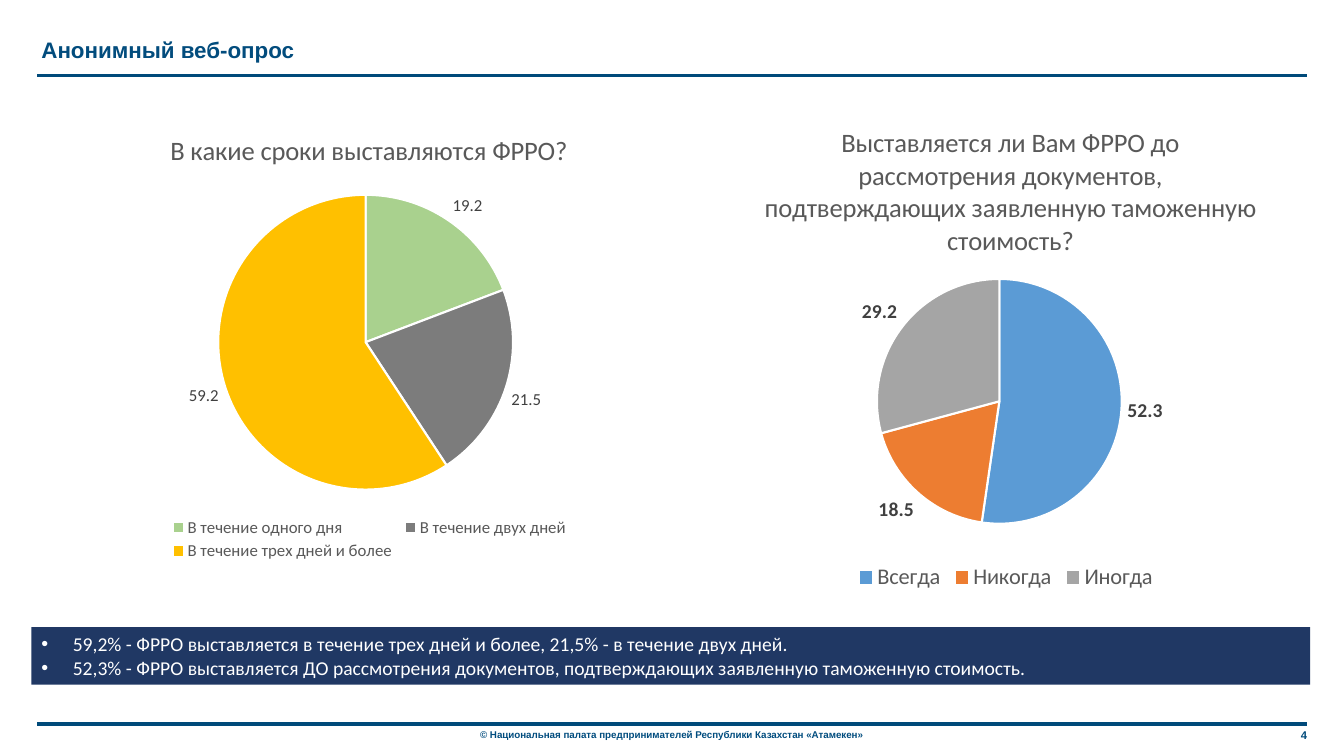
import pptx
import pptx.chart.data
import pptx.dml.color
import pptx.enum.chart
import pptx.enum.shapes
import pptx.enum.text
import pptx.oxml
import pptx.oxml.ns
import pptx.util

Cm, Pt = pptx.util.Cm, pptx.util.Pt
RGB = pptx.dml.color.RGBColor
ALIGN = pptx.enum.text.PP_ALIGN
ANCHOR = pptx.enum.text.MSO_ANCHOR

TITLE_BLUE = RGB(0x02, 0x4C, 0x7D)
RULE_BLUE = RGB(0x00, 0x4A, 0x7A)
FOOTER_BLUE = RGB(0x00, 0x4C, 0x7E)
NAVY = RGB(0x20, 0x38, 0x64)
WHITE = RGB(0xFF, 0xFF, 0xFF)
CHART_GREY = RGB(0x59, 0x59, 0x59)
LABEL_GREY = RGB(0x40, 0x40, 0x40)

HEADING = "Анонимный веб-опрос"
FINDINGS = [
    "59,2% - ФРРО выставляется в течение трех дней и более, 21,5% - в течение двух дней.",
    "52,3% - ФРРО выставляется ДО рассмотрения документов, "
    "подтверждающих заявленную таможенную стоимость.",
]
COPYRIGHT = "© Национальная палата предпринимателей Республики Казахстан «Атамекен»"
PAGE = "4"

# Boxes are left, top, width, height in cm; those inside a chart start at its corner.
QUESTIONS = [
    {
        "question": "В какие сроки выставляются ФРРО?",
        "answers": [
            ("В течение одного дня", 19.2, RGB(0xA9, 0xD1, 0x8E)),
            ("В течение двух дней", 21.5, RGB(0x7C, 0x7C, 0x7C)),
            ("В течение трех дней и более", 59.2, RGB(0xFF, 0xC0, 0x00)),
        ],
        "box": (1.07, 2.67, 16.31, 11.56),
        "question_at": (3.1, 0.55),
        "pie": (4.43, 2.24, 7.43, 7.43),
        "legend": (3.1, 10.3, 10.3, 1.25),
        "legend_size": 12,
        "label_size": 12,
        "label_bold": False,
    },
    {
        "question": "Выставляется ли Вам ФРРО до рассмотрения документов, "
                    "подтверждающих заявленную таможенную стоимость?",
        "answers": [
            ("Всегда", 52.3, RGB(0x5B, 0x9B, 0xD5)),
            ("Никогда", 18.5, RGB(0xED, 0x7D, 0x31)),
            ("Иногда", 29.2, RGB(0xA5, 0xA5, 0xA5)),
        ],
        "box": (17.35, 2.51, 16, 12.5),
        "question_at": (1.8, 0.5),
        "pie": (4.75, 4.52, 6.17, 6.17),
        "legend": None,
        "legend_size": 16,
        "label_size": 14,
        "label_bold": True,
    },
]


def set_font(font, size, color, bold=False, name="Calibri"):
    font.size, font.bold, font.name = Pt(size), bold, name
    font.color.rgb = color


def write(shape, lines, size, color, bold=False, name="Arial",
          align=ALIGN.LEFT, anchor=ANCHOR.TOP, hang=0):
    frame = shape.text_frame
    frame.word_wrap = True
    frame.auto_size = pptx.enum.text.MSO_AUTO_SIZE.NONE
    frame.vertical_anchor = anchor
    for number, line in enumerate(lines):
        paragraph = frame.add_paragraph() if number else frame.paragraphs[0]
        paragraph.alignment = align
        paragraph.space_before = Pt(0)
        if hang:
            properties = paragraph._p.get_or_add_pPr()
            properties.set("marL", str(Cm(hang)))
            properties.set("indent", str(-Cm(hang)))
        run = paragraph.add_run()
        run.text = line
        set_font(run.font, size, color, bold, name)


def move(shape, left, top, width, height):
    shape.left, shape.top = Cm(left), Cm(top)
    shape.width, shape.height = Cm(width), Cm(height)


def add_rule(slide, y):
    rule = slide.shapes.add_connector(
        pptx.enum.shapes.MSO_CONNECTOR.STRAIGHT, Cm(0.94), Cm(y), Cm(32.94), Cm(y))
    rule.line.color.rgb = RULE_BLUE
    rule.line.width = Pt(2.5)
    rule._element.spPr.append(pptx.oxml.parse_xml(
        "<a:effectLst %s/>" % pptx.oxml.ns.nsdecls("a")))


def place_in_chart(part, index, chart_box, box, inner=False):
    """Fix a chart part at a box, as shares of the chart's size."""
    for layout in part.findall(pptx.oxml.ns.qn("c:layout")):
        part.remove(layout)
    settings = '<c:layoutTarget val="inner"/>' if inner else ""
    settings += '<c:xMode val="edge"/><c:yMode val="edge"/>'
    for key, length, whole in zip("xywh", box, chart_box[2:] * 2):
        settings += '<c:%s val="%.4f"/>' % (key, length / whole)
    part.insert(index, pptx.oxml.parse_xml(
        "<c:layout %s><c:manualLayout>%s</c:manualLayout></c:layout>"
        % (pptx.oxml.ns.nsdecls("c"), settings)))


def add_pie(slide, poll):
    names, shares, colors = zip(*poll["answers"])
    data = pptx.chart.data.CategoryChartData()
    data.categories = names
    data.add_series("Series 1", shares)
    chart = slide.shapes.add_chart(
        pptx.enum.chart.XL_CHART_TYPE.PIE, *map(Cm, poll["box"]), data).chart
    chart.font.name, chart.font.size = "Calibri", Pt(10)

    chart.has_title = True
    question = chart.chart_title.text_frame.paragraphs[0].add_run()
    question.text = poll["question"]
    set_font(question.font, 19, CHART_GREY)
    place_in_chart(chart.chart_title._element, 1, poll["box"], poll["question_at"])

    chart.has_legend = True
    chart.legend.position = pptx.enum.chart.XL_LEGEND_POSITION.BOTTOM
    chart.legend.include_in_layout = False
    set_font(chart.legend.font, poll["legend_size"], CHART_GREY)
    if poll["legend"]:
        place_in_chart(chart.legend._element, 1, poll["box"], poll["legend"])

    plot = chart.plots[0]
    plot.vary_by_categories = True
    place_in_chart(plot._element.getparent(), 0, poll["box"], poll["pie"], inner=True)
    for number, color in enumerate(colors):
        slice_format = plot.series[0].points[number].format
        slice_format.fill.solid()
        slice_format.fill.fore_color.rgb = color
        slice_format.line.color.rgb = WHITE
        slice_format.line.width = Pt(1.5)
    labels = plot.series[0].data_labels
    labels.show_value = True
    labels.show_percentage = False
    labels.position = pptx.enum.chart.XL_LABEL_POSITION.OUTSIDE_END
    set_font(labels.font, poll["label_size"], LABEL_GREY, poll["label_bold"])


def main():
    deck = pptx.Presentation()
    deck.slide_width, deck.slide_height = Cm(33.87), Cm(19.05)
    slide = deck.slides.add_slide(deck.slide_layouts[1])

    for y in (1.9, 18.24):
        add_rule(slide, y)

    heading, findings = slide.placeholders
    move(heading, 0.79, 0.79, 22.28, 0.94)
    write(heading, [HEADING], 16, TITLE_BLUE, bold=True, anchor=ANCHOR.MIDDLE)

    move(findings, 0.79, 15.8, 32.23, 1.45)
    findings.fill.solid()
    findings.fill.fore_color.rgb = NAVY
    write(findings, FINDINGS, 14, WHITE, name="Calibri", anchor=ANCHOR.MIDDLE, hang=0.79)

    for poll in QUESTIONS:
        add_pie(slide, poll)

    page = slide.shapes.add_textbox(Cm(31.39), Cm(18.24), Cm(1.8), Cm(0.58))
    write(page, [PAGE], 8, RULE_BLUE, bold=True, align=ALIGN.RIGHT)
    rights = slide.shapes.add_textbox(Cm(10.97), Cm(18.24), Cm(11.91), Cm(0.56))
    write(rights, [COPYRIGHT], 7, FOOTER_BLUE, bold=True, align=ALIGN.CENTER)

    deck.save("out.pptx")


if __name__ == "__main__":
    main()
